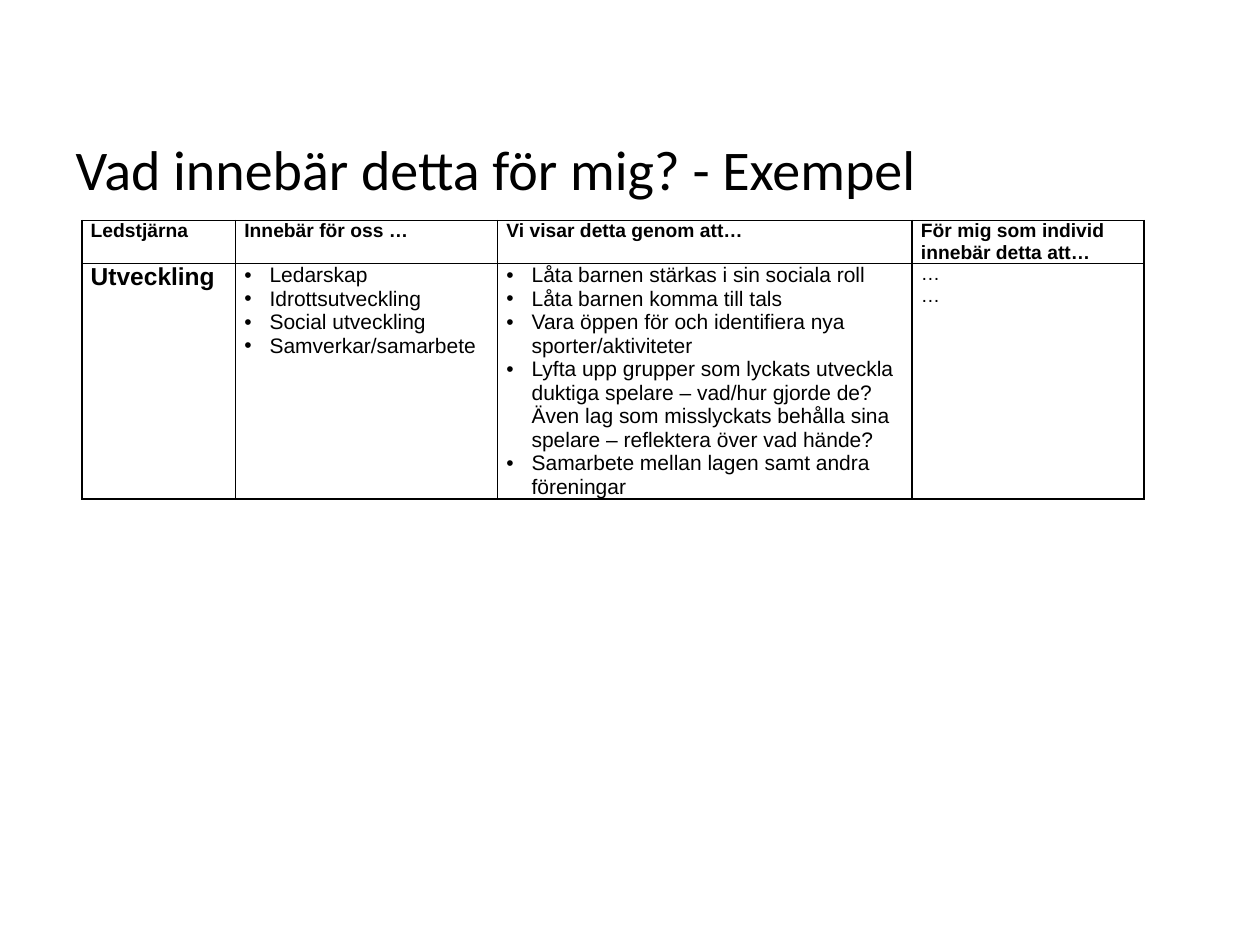
from dataclasses import dataclass

from lxml import etree
from pptx import Presentation
from pptx.dml.color import RGBColor
from pptx.enum.text import MSO_ANCHOR, PP_ALIGN
from pptx.oxml.ns import qn
from pptx.util import Inches, Pt

LEFT = PP_ALIGN.LEFT
TOP = MSO_ANCHOR.TOP
MIDDLE = MSO_ANCHOR.MIDDLE


@dataclass(frozen=True)
class Theme:
    """Colours, fonts and type sizes of the slide."""
    ink: str = "000000"
    head: str = "Calibri"
    body: str = "Arial"
    title: int = 32
    term: int = 14
    item: int = 12
    label: int = 11
    rule: int = 1


THEME = Theme()
TITLE = "Vad innebär detta för mig? - Exempel"
COLS = (1.22, 2.08, 3.29, 1.84)
ROWS = (0.34, 1.87)
HEADS = (
    "Ledstjärna",
    "Innebär för oss …",
    "Vi visar detta genom att…",
    "För mig som individ innebär detta att…",
)
MEANS = (
    "Ledarskap",
    "Idrottsutveckling",
    "Social utveckling",
    "Samverkar/samarbete",
)
SHOWN = (
    "Låta barnen stärkas i sin sociala roll",
    "Låta barnen komma till tals",
    "Vara öppen för och identifiera nya sporter/aktiviteter",
    "Lyfta upp grupper som lyckats utveckla duktiga spelare – vad/hur gjorde de? "
    "Även lag som misslyckats behålla sina spelare – reflektera över vad hände?",
    "Samarbete mellan lagen samt andra föreningar",
)


def apply(target, **values):
    """Set each given attribute on the target."""
    for name, value in values.items():
        setattr(target, name, value)


def write(para, text, size, face, bold=False):
    """Add one styled run to a paragraph."""
    run = para.add_run()
    run.text = text
    apply(run.font, name=face, size=Pt(size), bold=bold)
    run.font.color.rgb = RGBColor.from_string(THEME.ink)


def add_bullet(para):
    """Give a paragraph a hanging round bullet."""
    props = para._p.get_or_add_pPr()
    props.set("marL", str(Inches(0.2)))
    props.set("indent", str(-Inches(0.2)))
    etree.SubElement(props, qn("a:buFont"), typeface=THEME.body)
    etree.SubElement(props, qn("a:buChar"), char="•")


def add_rules(cell):
    """Draw a thin line on all four sides of a cell."""
    props = cell._tc.get_or_add_tcPr()
    for side in ("lnL", "lnR", "lnT", "lnB"):
        line = etree.SubElement(props, qn(f"a:{side}"), w=str(Pt(THEME.rule)))
        fill = etree.SubElement(line, qn("a:solidFill"))
        etree.SubElement(fill, qn("a:srgbClr"), val=THEME.ink)


def fill_cell(cell, lines, size, bold=False, bullet=False):
    """Format a cell and write its lines as paragraphs."""
    apply(cell, margin_left=Inches(0.07), margin_right=Inches(0.07),
          margin_top=0, margin_bottom=0, vertical_anchor=TOP)
    add_rules(cell)
    cell.fill.background()
    frame = cell.text_frame
    for i, text in enumerate(lines):
        para = frame.add_paragraph() if i else frame.paragraphs[0]
        if bullet:
            add_bullet(para)
        write(para, text, size, THEME.body, bold)


def add_title(slide):
    """Place and write the slide title."""
    title = slide.shapes.title
    apply(title, left=Inches(0.5), top=Inches(0.92),
          width=Inches(9), height=Inches(0.83))
    apply(title.text_frame, vertical_anchor=MIDDLE, word_wrap=True)
    para = title.text_frame.paragraphs[0]
    para.alignment = LEFT
    write(para, TITLE, THEME.title, THEME.head)


def add_grid(slide):
    """Add the table of guiding stars."""
    table = slide.shapes.add_table(
        len(ROWS), len(COLS), Inches(0.65), Inches(1.75),
        Inches(sum(COLS)), Inches(sum(ROWS))).table
    apply(table, first_row=False, horz_banding=False)
    for col, width in zip(table.columns, COLS):
        col.width = Inches(width)
    for row, height in zip(table.rows, ROWS):
        row.height = Inches(height)
    for i, head in enumerate(HEADS):
        fill_cell(table.cell(0, i), [head], THEME.label, bold=True)
    fill_cell(table.cell(1, 0), ["Utveckling"], THEME.term, bold=True)
    for i, lines in enumerate((MEANS, SHOWN), 1):
        fill_cell(table.cell(1, i), lines, THEME.item, bullet=True)
    fill_cell(table.cell(1, 3), ["…", "…"], THEME.label)


def main():
    """Build and save the slide."""
    deck = Presentation()
    apply(deck, slide_width=Inches(10), slide_height=Inches(7.5))
    slide = deck.slides.add_slide(deck.slide_layouts[5])
    add_title(slide)
    add_grid(slide)
    deck.save("out.pptx")


if __name__ == "__main__":
    main()
